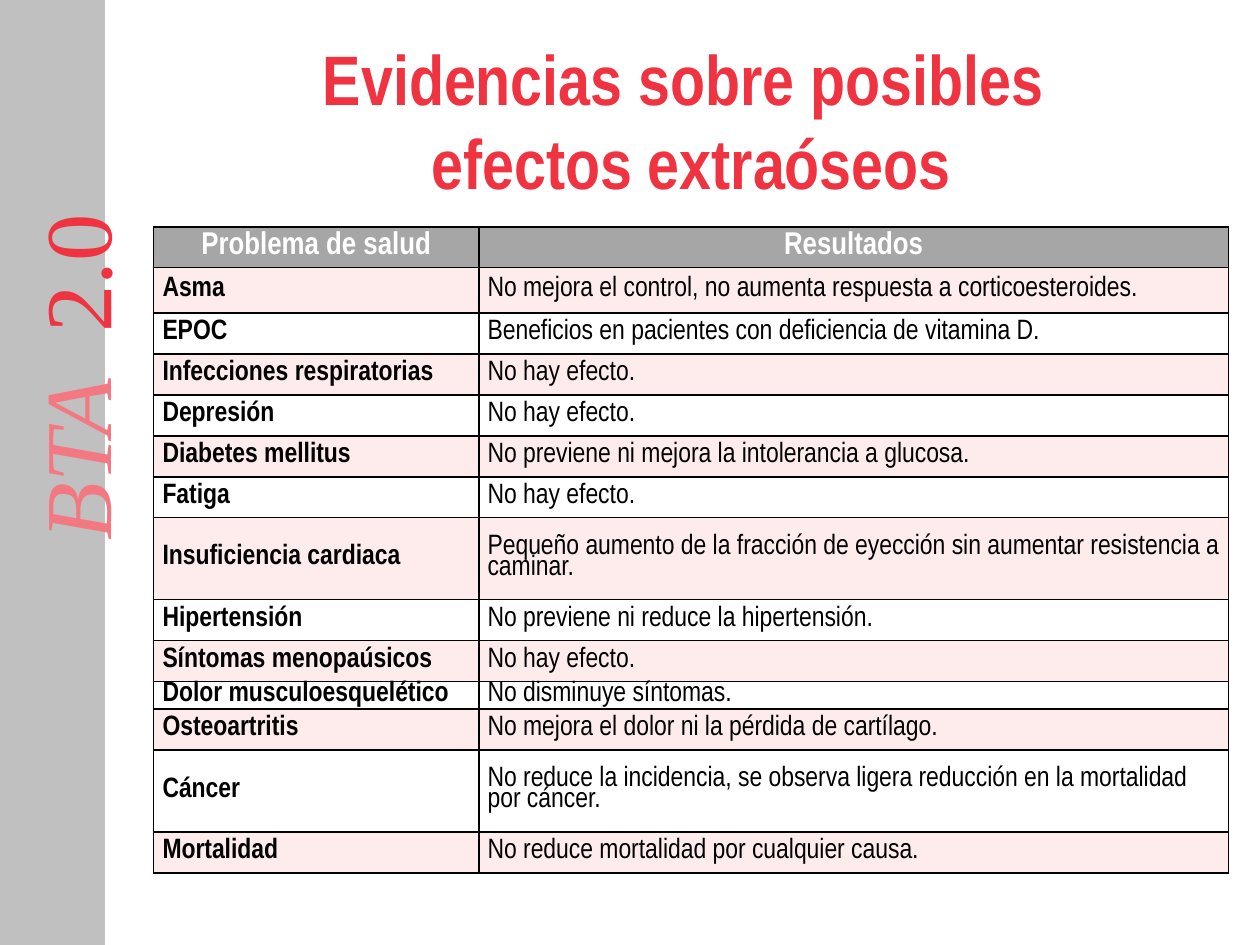
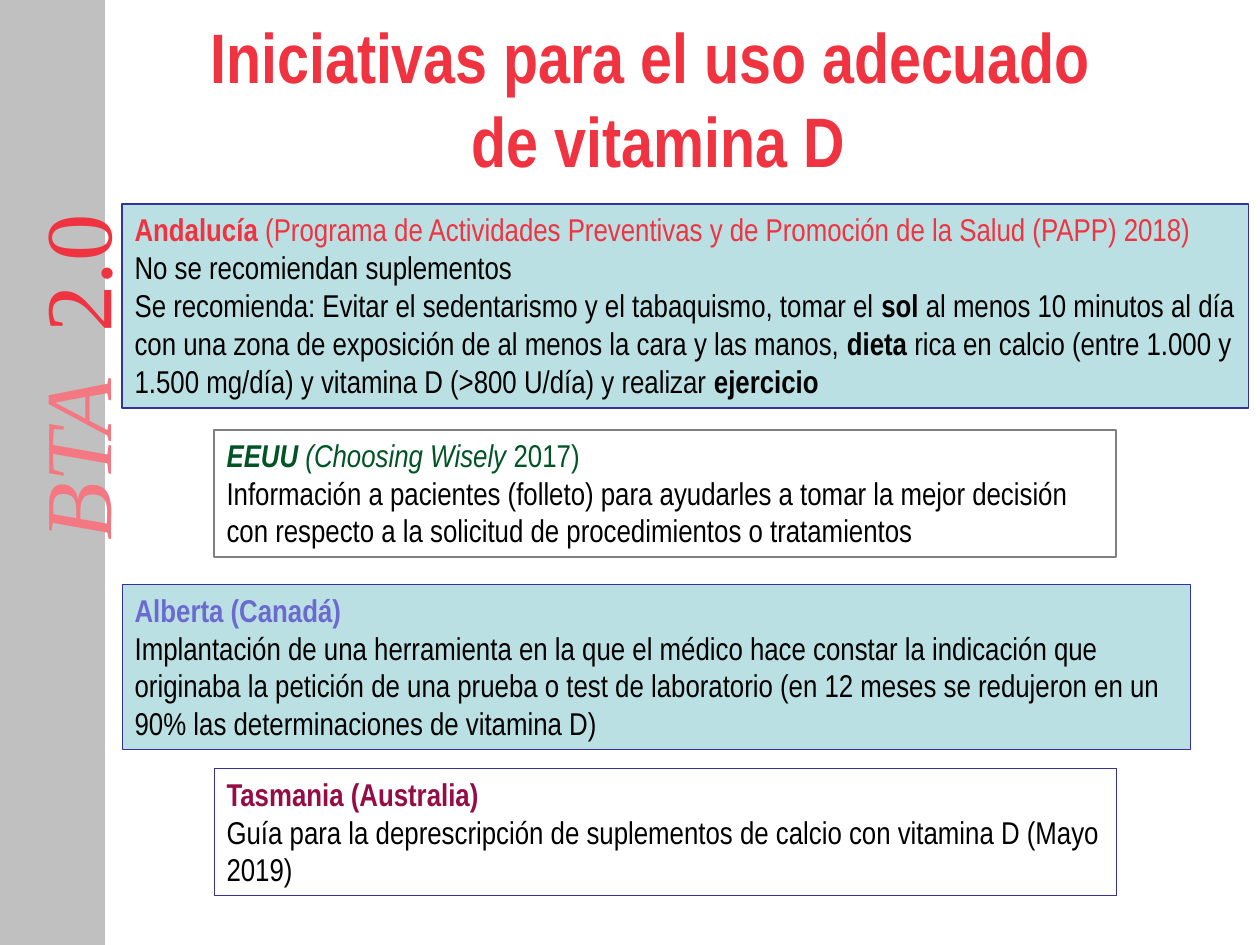
"""Build two slides on vitamin D: evidence table and initiatives for proper use."""
from lxml.etree import SubElement
from pptx import Presentation
from pptx.dml.color import RGBColor
from pptx.enum.shapes import MSO_SHAPE
from pptx.enum.text import MSO_ANCHOR, MSO_AUTO_SIZE, PP_ALIGN
from pptx.oxml.ns import qn
from pptx.util import Inches, Pt

RED, GREY, BLACK, WHITE = "EF3340", "C0C0C0", "000000", "FFFFFF"
PINK, AQUA, NAVY = "FEECED", "BBE0E3", "333399"
NARROW, SERIF = "Arial Narrow", "Times New Roman"


def tint(text):
    return RGBColor.from_string(text)


def style(par, size, color, bold=None, name=NARROW, align=PP_ALIGN.LEFT):
    par.alignment = align
    font = par.font
    font.name, font.size, font.bold = name, Pt(size), bold
    font.color.rgb = tint(color)


deck = Presentation()
deck.slide_width, deck.slide_height = Inches(10), Inches(7.5)
layout = deck.slide_layouts[5]
for holder in list(layout.placeholders):
    if holder.placeholder_format.idx:
        layout.shapes.element.remove(holder.element)

titles = [
    ("Evidencias sobre posibles \vefectos extraóseos", 1.22, 0.21, 8.53),
    ("Iniciativas para el uso adecuado \vde vitamina D", 0.75, 0.04, 8.95),
]
slides = []
for text, left, top, width in titles:
    slide = deck.slides.add_slide(layout)
    title = slide.shapes.title
    title.left, title.top = Inches(left), Inches(top)
    title.width, title.height = Inches(width), Inches(1.47)
    frame = title.text_frame
    frame.text = text
    frame.auto_size = MSO_AUTO_SIZE.NONE
    frame.vertical_anchor = MSO_ANCHOR.MIDDLE
    style(frame.paragraphs[0], 40, RED, True, align=PP_ALIGN.CENTER)
    slides.append(slide)
facts, plans = slides

band = facts.shapes.add_shape(MSO_SHAPE.RECTANGLE, 0, 0, Inches(0.83), Inches(7.5))
band.shadow.inherit = False
band.fill.solid()
band.fill.fore_color.rgb = band.line.color.rgb = tint(GREY)
band.line.width = Pt(0.75)

label = facts.shapes.add_textbox(Inches(-1.03), Inches(2.27), Inches(3.23), Inches(1))
label.rotation = 270
label.text_frame.word_wrap = True
par = label.text_frame.paragraphs[0]
tabs = SubElement(par._p.get_or_add_pPr(), qn("a:tabLst"))
SubElement(tabs, qn("a:tab"), pos=str(Inches(1.65)), algn="l")
style(par, 54, RED, name=SERIF)
run = par.add_run()
run.text = "BTA"
run.font.italic = True
run.font.color.rgb = tint("F47881")
par.add_run().text = "\t2.0"
for part in (band, label):
    layout.shapes.element.append(part.element)

PLAIN, TALL = 3.25 / 10, 0.65
rows = [
    ("Problema de salud", "Resultados", PLAIN),
    ("Asma", "No mejora el control, no aumenta respuesta a corticoesteroides.", 0.36),
    ("EPOC", "Beneficios en pacientes con deficiencia de vitamina D.", PLAIN),
    ("Infecciones respiratorias", "No hay efecto.", PLAIN),
    ("Depresión", "No hay efecto.", PLAIN),
    ("Diabetes mellitus", "No previene ni mejora la intolerancia a glucosa.", PLAIN),
    ("Fatiga", "No hay efecto.", PLAIN),
    ("Insuficiencia cardiaca", "Pequeño aumento de la fracción de eyección sin "
     "aumentar resistencia a caminar.", TALL),
    ("Hipertensión", "No previene ni reduce la hipertensión.", PLAIN),
    ("Síntomas menopaúsicos", "No hay efecto.", PLAIN),
    ("Dolor musculoesquelético", "No disminuye síntomas.", 0.22),
    ("Osteoartritis", "No mejora el dolor ni la pérdida de cartílago.", PLAIN),
    ("Cáncer", "No reduce la incidencia, se observa ligera reducción en la "
     "mortalidad por cáncer.", TALL),
    ("Mortalidad", "No reduce mortalidad por cualquier causa.", PLAIN),
]
height = sum(row[2] for row in rows)
table = facts.shapes.add_table(
    len(rows), 2, Inches(1.22), Inches(1.8), Inches(8.53), Inches(height)).table
table.first_row = table.horz_banding = False
table.columns[0].width, table.columns[1].width = Inches(2.58), Inches(5.95)
for r, (*texts, tall) in enumerate(rows):
    table.rows[r].height = Inches(tall)
    for c, text in enumerate(texts):
        cell = table.cell(r, c)
        cell.text = text
        cell.vertical_anchor = MSO_ANCHOR.MIDDLE
        cell.margin_left = cell.margin_right = Inches(0.07)
        cell.margin_top = cell.margin_bottom = 0
        for side in ("lnL", "lnR", "lnT", "lnB"):
            edge = SubElement(cell._tc.get_or_add_tcPr(), qn("a:" + side), w=str(Pt(1)))
            fill = SubElement(edge, qn("a:solidFill"))
            SubElement(fill, qn("a:srgbClr"), val=BLACK)
        if r == 0 or r % 2:
            cell.fill.solid()
            cell.fill.fore_color.rgb = tint(PINK if r else "A6A6A6")
        else:
            cell.fill.background()
        par = cell.text_frame.paragraphs[0]
        par.line_spacing = 0.8
        if r:
            style(par, 16, BLACK, c == 0)
        else:
            style(par, 18, WHITE, True, align=PP_ALIGN.CENTER)

boxes = [
    (0.97, 1.62, 8.94, 1.62, AQUA, NAVY, 1, [
        (RED, [("Andalucía ", "b"), ("(Programa de Actividades Preventivas y de "
                                     "Promoción de la Salud (PAPP) 2018)", "")]),
        (BLACK, [("No se recomiendan suplementos", "")]),
        (BLACK, [("Se recomienda: Evitar el sedentarismo y el tabaquismo, tomar el ", ""),
                 ("sol ", "b"),
                 ("al menos 10 minutos al día con una zona de exposición de al menos "
                  "la cara y las manos, ", ""),
                 ("dieta", "b"),
                 (" rica en calcio (entre 1.000 y 1.500 mg/día) y vitamina D "
                  "(>800 U/día) y realizar ", ""),
                 ("ejercicio", "b")])]),
    (1.7, 3.41, 7.16, 1.01, None, "808080", 1, [
        ("005426", [("EEUU ", "bi"), ("(Choosing Wisely ", "i"), ("2017)", "")]),
        (BLACK, [("Información a pacientes (folleto) para ayudarles a tomar la mejor "
                  "decisión con respecto a la solicitud de procedimientos o "
                  "tratamientos", "")])]),
    (0.97, 4.64, 8.48, 1.31, AQUA, NAVY, 0.75, [
        ("6B6BCF", [("Alberta (Canadá)", "b")]),
        (BLACK, [("Implantación de una herramienta en la que el médico hace constar la "
                  "indicación que originaba la petición de una prueba o test de "
                  "laboratorio (en 12 meses se redujeron en un 90% las "
                  "determinaciones de vitamina D)", "")])]),
    (1.7, 6.1, 7.16, 1.01, None, NAVY, 0.75, [
        ("960C44", [("Tasmania (Australia)", "b")]),
        (BLACK, [("Guía para la deprescripción de suplementos de calcio con vitamina D "
                  "(Mayo 2019)", "")])]),
]
for *place, fill, line, weight, pars in boxes:
    box = plans.shapes.add_shape(MSO_SHAPE.RECTANGLE, *map(Inches, place))
    box.shadow.inherit = False
    if fill:
        box.fill.solid()
        box.fill.fore_color.rgb = tint(fill)
    else:
        box.fill.background()
    box.line.color.rgb = tint(line)
    box.line.width = Pt(weight)
    frame = box.text_frame
    frame.word_wrap = True
    frame.vertical_anchor = MSO_ANCHOR.TOP
    for n, (color, runs) in enumerate(pars):
        par = frame.add_paragraph() if n else frame.paragraphs[0]
        style(par, 18, color)
        for text, marks in runs:
            run = par.add_run()
            run.text = text
            run.font.bold, run.font.italic = "b" in marks, "i" in marks

deck.save("out.pptx")
